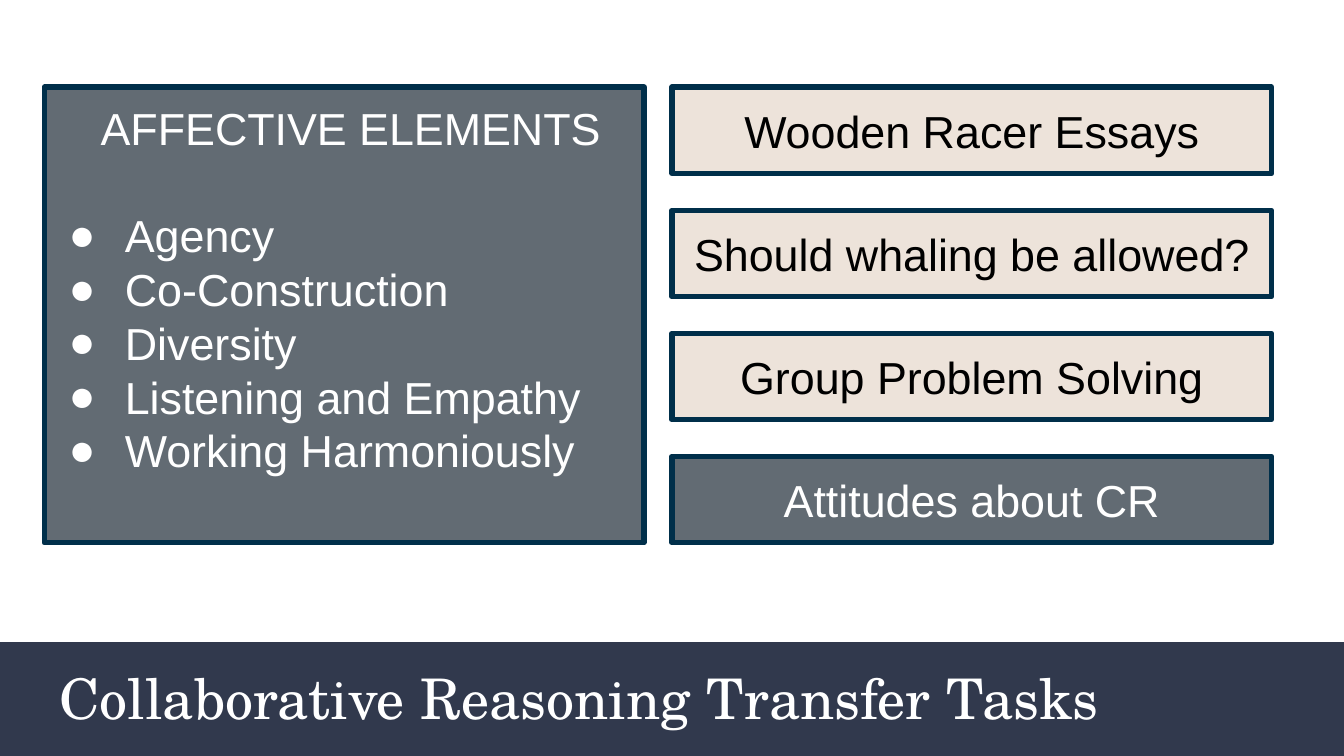
from pptx import Presentation
from pptx import util as u
from pptx.dml.color import RGBColor
from pptx.enum import shapes, text
from pptx.oxml.ns import qn
from lxml import etree

NAVY = RGBColor(0x31, 0x39, 0x4D)
OUTLINE = RGBColor(0x00, 0x2F, 0x4A)
SLATE = RGBColor(0x62, 0x6B, 0x73)
CREAM = RGBColor(0xED, 0xE3, 0xDA)
BLACK = RGBColor(0, 0, 0)
WHITE = RGBColor(0xFF, 0xFF, 0xFF)

INSET = u.Cm(0.25)
LINE_PITCH = u.Pt(28.8)

TASKS = [
    ("Wooden Racer Essays", CREAM, BLACK),
    ("Should whaling be allowed?", CREAM, BLACK),
    ("Group Problem Solving", CREAM, BLACK),
    ("Attitudes about CR", SLATE, WHITE),
]
ELEMENTS = ["Agency", "Co-Construction", "Diversity",
            "Listening and Empathy", "Working Harmoniously"]


def add_run(p, words, color, size=24, font="Arial"):
    r = p.add_run()
    r.text = words
    r.font.size = u.Pt(size)
    r.font.name = font
    r.font.color.rgb = color


def setup_frame(tf, anchor):
    tf.word_wrap = True
    tf.auto_size = text.MSO_AUTO_SIZE.NONE
    tf.vertical_anchor = anchor
    tf.margin_left = tf.margin_right = INSET
    tf.margin_top = tf.margin_bottom = INSET


def add_box(s, box, fill, outlined=True):
    sp = s.shapes.add_shape(shapes.MSO_SHAPE.RECTANGLE, *box)
    sp.shadow.inherit = False
    sp.fill.solid()
    sp.fill.fore_color.rgb = fill
    if outlined:
        sp.line.color.rgb = OUTLINE
        sp.line.width = u.Pt(3)
        # Rounded corners on the outline
        etree.SubElement(sp.line._get_or_add_ln(), qn("a:round"))
    else:
        sp.line.fill.background()
    return sp


def add_bullet(p, color):
    pPr = p._p.get_or_add_pPr()
    pPr.set("marL", str(u.Cm(1.27)))
    pPr.set("indent", str(-u.Cm(1.06)))
    clr = etree.SubElement(pPr, qn("a:buClr"))
    etree.SubElement(clr, qn("a:srgbClr"), val=str(color))
    etree.SubElement(pPr, qn("a:buFont"), typeface="Arial")
    etree.SubElement(pPr, qn("a:buChar"), char="●")


def title_band(s, left, top, width, height):
    band = add_box(s, (left, top, width, height), NAVY, outlined=False)
    title = s.shapes.title
    title.element.addprevious(band.element)  # band goes behind the title
    title.left, title.top = left + u.Cm(0.87), top + u.Cm(0.41)
    title.width, title.height = u.Cm(22.17), u.Cm(1.27)
    tf = title.text_frame
    setup_frame(tf, text.MSO_ANCHOR.MIDDLE)
    p = tf.paragraphs[0]
    p.alignment = text.PP_ALIGN.LEFT
    add_run(p, "Collaborative Reasoning Transfer Tasks", WHITE, 30,
            "TeX Gyre Schola")


def elements_panel(s, left, top, width, height):
    tf = add_box(s, (left, top, width, height), SLATE).text_frame
    setup_frame(tf, text.MSO_ANCHOR.TOP)
    tf.margin_right = 0
    # Heading
    p = tf.paragraphs[0]
    p.alignment = text.PP_ALIGN.CENTER
    p.line_spacing = p.space_after = LINE_PITCH
    add_run(p, "AFFECTIVE ELEMENTS", WHITE)
    # Bulleted list
    for words in ELEMENTS:
        p = tf.add_paragraph()
        p.alignment = text.PP_ALIGN.LEFT
        p.line_spacing = LINE_PITCH
        add_bullet(p, WHITE)
        add_run(p, words, WHITE)


def task_column(s, left, top, width, height):
    box_h = u.Cm(1.63)
    step = (height - box_h) // (len(TASKS) - 1)
    for i, (words, fill, color) in enumerate(TASKS):
        sp = add_box(s, (left, top + i * step, width, box_h), fill)
        setup_frame(sp.text_frame, text.MSO_ANCHOR.MIDDLE)
        p = sp.text_frame.paragraphs[0]
        p.alignment = text.PP_ALIGN.CENTER
        p.line_spacing = LINE_PITCH
        add_run(p, words, color)


def main():
    prs = Presentation()
    prs.slide_width, prs.slide_height = u.Cm(25.4), u.Cm(14.29)
    s = prs.slides.add_slide(prs.slide_layouts[5])  # title only

    band_top = u.Cm(12.14)
    title_band(s, 0, band_top, prs.slide_width, prs.slide_height - band_top)

    top, width, height = u.Cm(1.65), u.Cm(11.33), u.Cm(8.61)
    task_column(s, u.Cm(12.7), top, width, height)
    elements_panel(s, u.Cm(0.84), top, width, height)

    prs.save("out.pptx")


if __name__ == "__main__":
    main()
